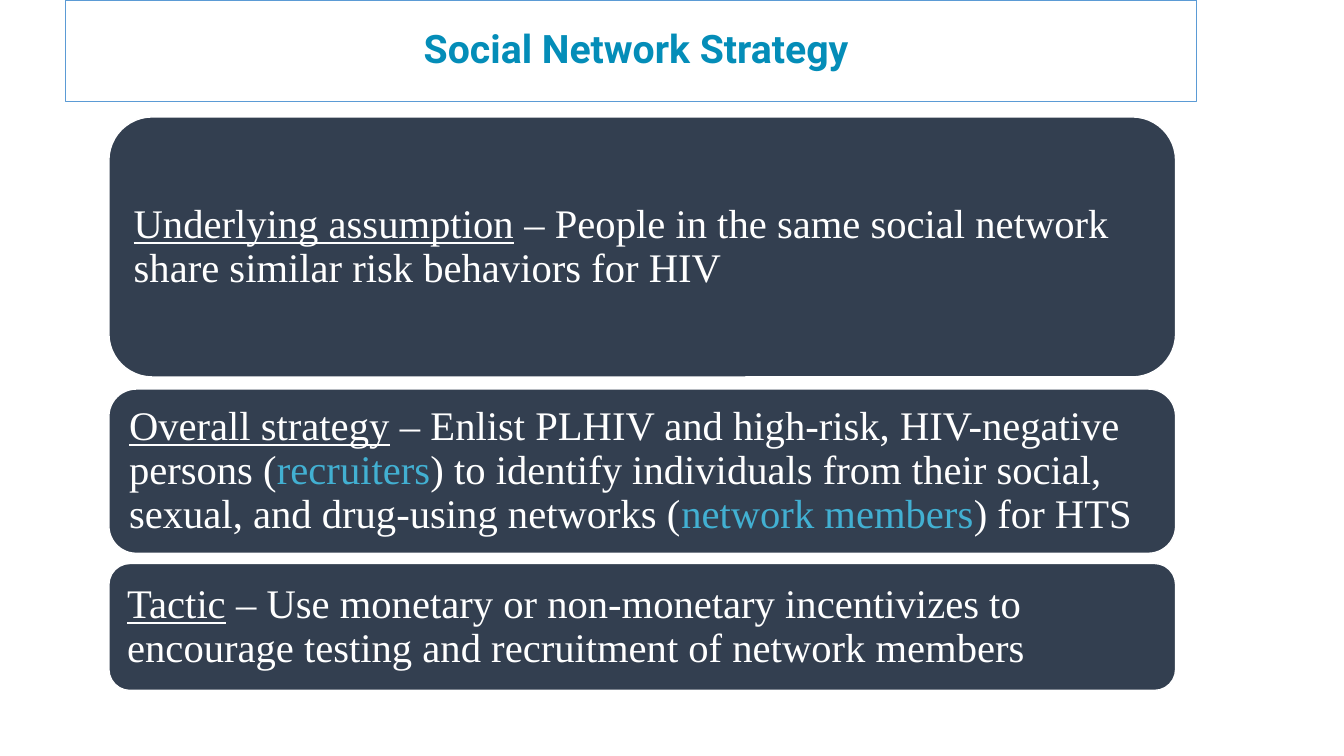
from dataclasses import dataclass

import pptx
import pptx.util
from pptx.dml.color import RGBColor
from pptx.enum.shapes import MSO_SHAPE
from pptx.enum.text import MSO_ANCHOR, PP_ALIGN

EMU_PER_PX = 9144  # 100 px to the inch


@dataclass(frozen=True)
class Theme:
    title_color: str = "048DB8"
    title_border: str = "5B9BD5"
    card_fill: str = "333F50"
    white: str = "FFFFFF"
    highlight: str = "42B0D2"
    title_font: str = "Roboto"
    body_font: str = "Times New Roman"
    title_size: int = 28
    body_size: int = 29
    line_spacing: float = 0.9


def px(length):
    return pptx.util.Emu(length * EMU_PER_PX)


def rgb(color):
    return RGBColor.from_string(color)


class SlideBuilder:
    def __init__(self, presentation, theme):
        self.theme = theme
        self.slide = presentation.slides.add_slide(presentation.slide_layouts[6])

    def box(self, preset, left, top, width, height, line_color, line_width, inset):
        shape = self.slide.shapes.add_shape(
            preset, px(left), px(top), px(width), px(height))
        shape.shadow.inherit = False
        shape.line.color.rgb = rgb(line_color)
        shape.line.width = pptx.util.Pt(line_width)
        frame = shape.text_frame
        frame.word_wrap = True
        frame.vertical_anchor = MSO_ANCHOR.MIDDLE
        frame.margin_left = frame.margin_right = px(inset)
        frame.margin_top = frame.margin_bottom = px(inset)
        return shape

    def format_paragraph(self, paragraph, alignment, font_name, size, color=None):
        paragraph.alignment = alignment
        paragraph.line_spacing = self.theme.line_spacing
        paragraph.font.name = font_name
        paragraph.font.size = pptx.util.Pt(size)
        if color:
            paragraph.font.color.rgb = rgb(color)

    def title(self, text, left, top, width, height):
        theme = self.theme
        shape = self.box(MSO_SHAPE.RECTANGLE, left, top, width, height,
                         theme.title_border, 0.75, 5)
        shape.fill.background()
        paragraph = shape.text_frame.paragraphs[0]
        paragraph.add_run().text = text
        self.format_paragraph(paragraph, PP_ALIGN.CENTER, theme.title_font,
                              theme.title_size, theme.title_color)
        paragraph.font.bold = True

    def card(self, term, pieces, left, top, width, height):
        """Add a rounded card: underlined term, then plain and highlighted pieces in turn."""
        theme = self.theme
        shape = self.box(MSO_SHAPE.ROUNDED_RECTANGLE, left, top, width, height,
                         theme.white, 1, 12)
        shape.fill.solid()
        shape.fill.fore_color.rgb = rgb(theme.card_fill)
        paragraph = shape.text_frame.paragraphs[0]
        self.format_paragraph(paragraph, PP_ALIGN.LEFT, theme.body_font, theme.body_size)
        for index, text in enumerate([term, *pieces]):
            run = paragraph.add_run()
            run.text = text
            highlighted = index > 0 and index % 2 == 0
            run.font.color.rgb = rgb(theme.highlight if highlighted else theme.white)
            run.font.underline = index == 0


CARDS = [
    (116, 258, "Underlying assumption",
     [" – People in the same social network share similar risk behaviors for HIV"]),
    (386, 163, "Overall strategy",
     [" – Enlist PLHIV and high-risk, HIV-negative persons (", "recruiters",
      ") to identify individuals from their social, sexual, and drug-using networks (",
      "network members", ") for HTS"]),
    (559, 126, "Tactic",
     [" – Use monetary or non-monetary incentivizes to encourage testing and "
      "recruitment of network members"]),
]


def main():
    presentation = pptx.Presentation()
    presentation.slide_width = px(1333)
    presentation.slide_height = px(750)
    builder = SlideBuilder(presentation, Theme())
    builder.title(" Social Network Strategy", 65, 0, 1122, 101)
    for top, height, term, pieces in CARDS:
        builder.card(term, pieces, 108, top, 1058, height)
    presentation.save("out.pptx")


if __name__ == "__main__":
    main()
